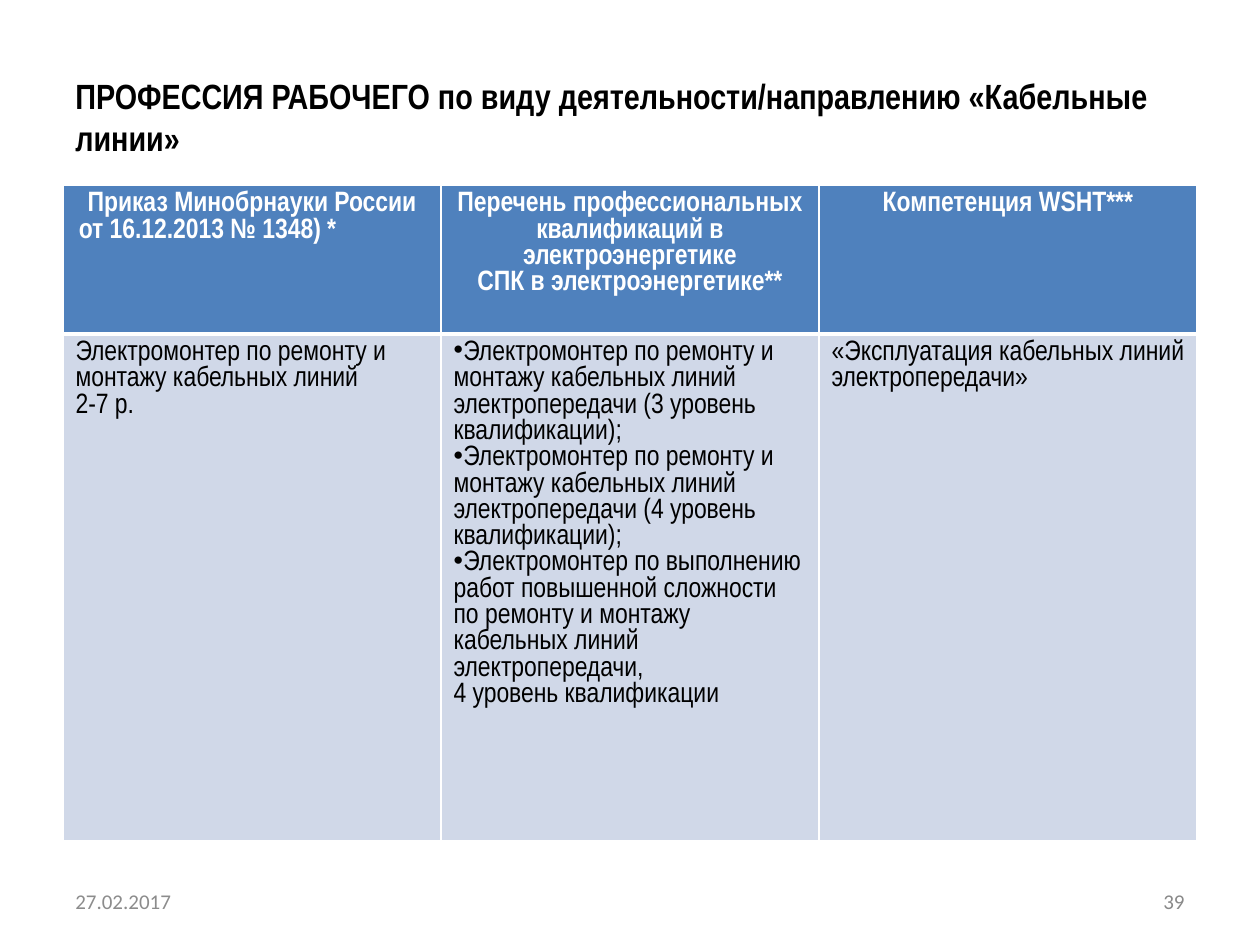
from lxml import etree
from pptx import Presentation
from pptx import util as u
from pptx.dml.color import RGBColor
from pptx.enum import text
from pptx.oxml import ns

WIDE, HIGH = 10, 7.5
EDGE = WIDE / 20
STOP = 2.75
HUES = {"head": "4F81BD", "body": "D0D8E8", "white": "FFFFFF",
        "black": "000000", "date": "8C8C8C", "page": "898989"}
LEFT, MID, RIGHT = text.PP_ALIGN.LEFT, text.PP_ALIGN.CENTER, text.PP_ALIGN.RIGHT

TITLE = "ПРОФЕССИЯ РАБОЧЕГО по виду деятельности/направлению «Кабельные линии»"
DATE, PAGE = "27.02.2017", "39"
HEADS = [
    ["Приказ Минобрнауки России от 16.12.2013 № 1348) *\t"],
    ["Перечень профессиональных квалификаций в электроэнергетике",
     "СПК в электроэнергетике**"],
    ["Компетенция WSHT***"],
]
CELLS = [
    ["Электромонтер по ремонту и монтажу кабельных линий \t2-7 р."],
    ["•Электромонтер по ремонту и монтажу кабельных линий электропередачи (3 уровень квалификации);",
     "•Электромонтер по ремонту и монтажу кабельных линий электропередачи (4 уровень квалификации);",
     "•Электромонтер по выполнению работ повышенной сложности по ремонту и монтажу",
     "кабельных линий электропередачи,",
     "4 уровень квалификации"],
    ["«Эксплуатация кабельных линий электропередачи»"],
]
ROWS = [
    {"cells": HEADS, "high": 1.18, "fill": "head", "hue": "white", "bold": True,
     "align": MID, "lines": {"L": 1, "R": 1, "T": 1, "B": 3}},
    {"cells": CELLS, "high": 4.02, "fill": "body", "hue": "black", "bold": False,
     "align": LEFT, "lines": {"L": 1, "R": 1, "T": 3, "B": 1}},
]
BOXES = [
    (TITLE, (EDGE, 0.3, WIDE - 2 * EDGE, 1.25), "black", LEFT,
     {"name": "Arial Narrow", "size": u.Pt(20), "bold": True}),
    (DATE, (EDGE, 6.95, 2.33, 0.4), "date", LEFT, {"name": "Calibri", "size": u.Pt(12)}),
    (PAGE, (WIDE - EDGE - 2.33, 6.95, 2.33, 0.4), "page", RIGHT,
     {"name": "Calibri", "size": u.Pt(12)}),
]


def paint(font, hue, form):
    for key, val in form.items():
        setattr(font, key, val)
    font.color.rgb = RGBColor.from_string(HUES[hue])


def add_box(slide, words, place, hue, align, form):
    frame = slide.shapes.add_textbox(*map(u.Inches, place)).text_frame
    frame.word_wrap = True
    frame.vertical_anchor = text.MSO_ANCHOR.MIDDLE
    para = frame.paragraphs[0]
    para.alignment = align
    run = para.add_run()
    run.text = words
    paint(run.font, hue, form)


def add_lines(cell, lines):
    props = cell._tc.get_or_add_tcPr()
    for spot, (side, thick) in enumerate(lines.items()):
        line = etree.Element(ns.qn("a:ln" + side), w=str(u.Pt(thick)))
        fill = etree.SubElement(line, ns.qn("a:solidFill"))
        etree.SubElement(fill, ns.qn("a:srgbClr"), val=HUES["white"])
        props.insert(spot, line)


def fill_cell(cell, paras, row):
    cell.fill.solid()
    cell.fill.fore_color.rgb = RGBColor.from_string(HUES[row["fill"]])
    add_lines(cell, row["lines"])
    frame = cell.text_frame
    for num, words in enumerate(paras):
        para = frame.add_paragraph() if num else frame.paragraphs[0]
        para.alignment = row["align"]
        props = para._p.get_or_add_pPr()
        if words.startswith("•"):
            props.set("marL", "0")
            props.set("indent", "0")
            etree.SubElement(props, ns.qn("a:buChar"), char="•")
        if "\t" in words:
            tabs = etree.SubElement(props, ns.qn("a:tabLst"))
            etree.SubElement(tabs, ns.qn("a:tab"), pos=str(u.Inches(STOP)), algn="l")
        run = para.add_run()
        run.text = words.lstrip("•")
        paint(run.font, row["hue"],
              {"name": "Arial Narrow", "size": u.Pt(16), "bold": row["bold"]})


def add_grid(slide):
    wide, high = WIDE - 2 * EDGE, sum(row["high"] for row in ROWS)
    place = map(u.Inches, (EDGE, 1.47, wide, high))
    table = slide.shapes.add_table(len(ROWS), len(HEADS), *place).table
    for col in table.columns:
        col.width = u.Inches(wide / len(HEADS))
    for y, row in enumerate(ROWS):
        table.rows[y].height = u.Inches(row["high"])
        for x, paras in enumerate(row["cells"]):
            fill_cell(table.cell(y, x), paras, row)


def main():
    deck = Presentation()
    deck.slide_width, deck.slide_height = u.Inches(WIDE), u.Inches(HIGH)
    slide = deck.slides.add_slide(deck.slide_layouts[6])
    for box in BOXES:
        add_box(slide, *box)
    add_grid(slide)
    deck.save("out.pptx")


if __name__ == "__main__":
    main()
